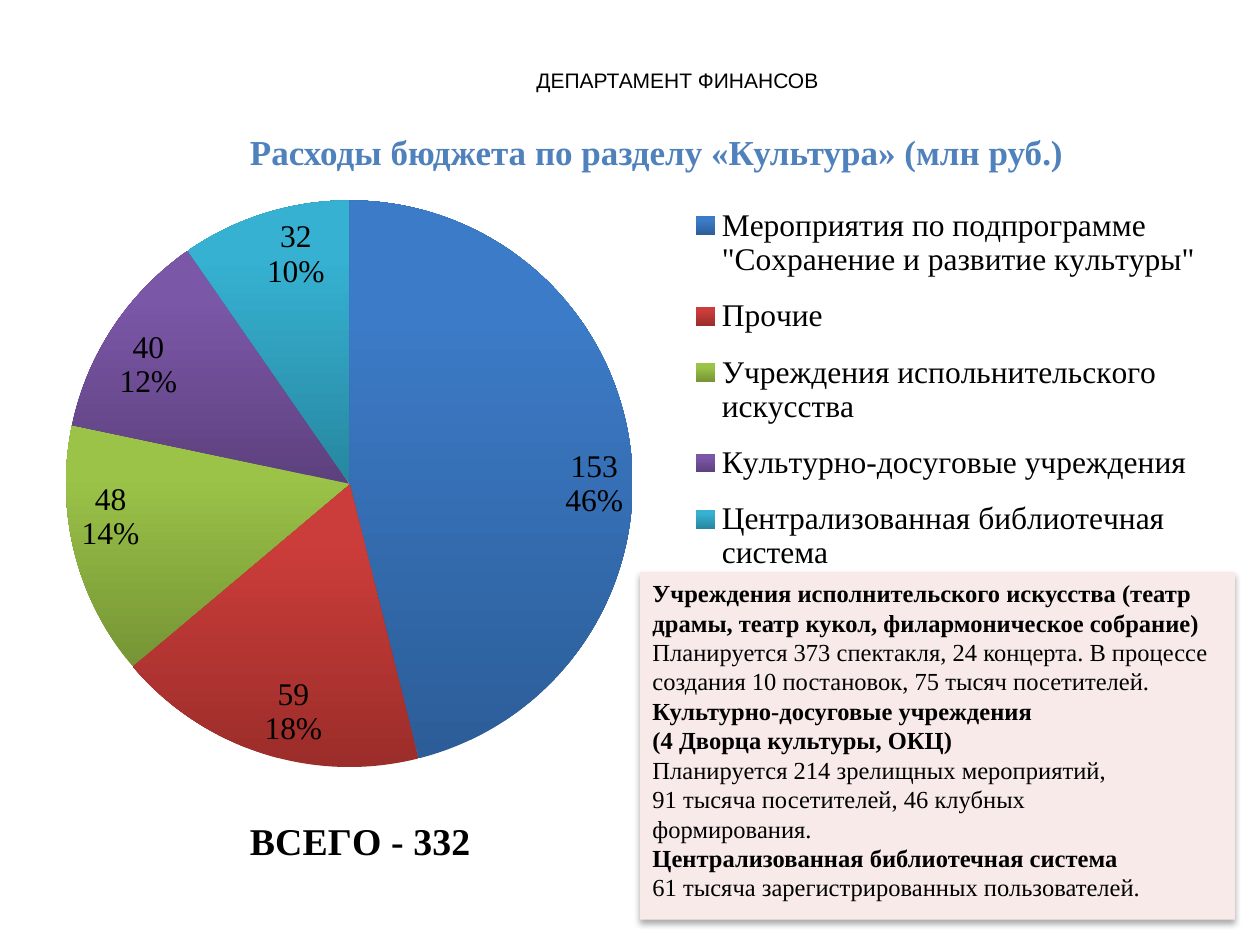
"""Build the slide on culture spending in the city budget."""
from lxml import etree
from pptx import Presentation
from pptx.chart.data import CategoryChartData
from pptx.dml.color import RGBColor
from pptx.enum.chart import XL_CHART_TYPE, XL_LABEL_POSITION as LabelPos, XL_LEGEND_POSITION as LegendPos
from pptx.enum.shapes import MSO_SHAPE
from pptx.enum.text import MSO_ANCHOR, PP_ALIGN
from pptx.oxml import parse_xml
from pptx.oxml.ns import nsdecls, qn
from pptx.util import Inches, Pt

BLACK = RGBColor(0x00, 0x00, 0x00)
HEADING_BLUE = RGBColor(0x4F, 0x81, 0xBD)
NOTE_PINK = RGBColor(0xF7, 0xEA, 0xE9)
SERIF = "Times New Roman"

DEPARTMENT = "ДЕПАРТАМЕНТ ФИНАНСОВ "
HEADING = "Расходы бюджета по разделу «Культура» (млн руб.) "
TOTAL = "ВСЕГО - 332"
SPENDING = [
    ('Мероприятия по подпрограмме "Сохранение и развитие культуры"', 153,
     RGBColor(0x2C, 0x5D, 0x98), RGBColor(0x3C, 0x7B, 0xC7)),
    ("Прочие ", 59, RGBColor(0x9B, 0x2D, 0x2A), RGBColor(0xCB, 0x3D, 0x3A)),
    ("Учреждения испольнительского искусства", 48,
     RGBColor(0x76, 0x95, 0x35), RGBColor(0x9B, 0xC3, 0x48)),
    ("Культурно-досуговые учреждения ", 40,
     RGBColor(0x5D, 0x41, 0x7E), RGBColor(0x7B, 0x57, 0xA8)),
    ("Централизованная библиотечная система", 32,
     RGBColor(0x27, 0x87, 0xA0), RGBColor(0x36, 0xB1, 0xD2)),
]
INSTITUTIONS = [
    (["Учреждения исполнительского искусства (театр",
      "драмы, театр кукол, филармоническое собрание)"],
     ["Планируется 373 спектакля, 24 концерта. В процессе",
      "создания 10 постановок, 75 тысяч посетителей."]),
    (["Культурно-досуговые учреждения", "(4 Дворца культуры, ОКЦ)"],
     ["Планируется 214 зрелищных мероприятий,",
      "91 тысяча посетителей, 46 клубных", "формирования."]),
    (["Централизованная библиотечная система"],
     ["61 тысяча зарегистрированных пользователей."]),
]


def style(font, size, color=BLACK, bold=False, name=SERIF):
    font.name, font.size, font.bold = name, Pt(size), bold
    font.color.rgb = color


def add_line(slide, box, text, *look):
    frame = slide.shapes.add_textbox(*map(Inches, box)).text_frame
    frame.word_wrap = True
    line = frame.paragraphs[0]
    line.alignment = PP_ALIGN.CENTER
    run = line.add_run()
    run.text = text
    style(run.font, *look)


def place(part, previous_tag=None, inner=False, **edges):
    for old in part.findall(qn("c:layout")):
        part.remove(old)
    layout = parse_xml(f'<c:layout {nsdecls("c")}><c:manualLayout/></c:layout>')
    settings = [("layoutTarget", "inner")] if inner else []
    settings += [("xMode", "edge"), ("yMode", "edge"), *edges.items()]
    for tag, value in settings:
        etree.SubElement(layout[0], qn(f"c:{tag}")).set("val", str(value))
    if previous_tag:
        part.find(qn(previous_tag)).addnext(layout)
    else:
        part.insert(0, layout)


def add_spending_chart(slide):
    data = CategoryChartData()
    data.categories = [name for name, *_ in SPENDING]
    data.add_series("Series 1", [amount for _, amount, *_ in SPENDING])
    box = map(Inches, (0.43, 1.31, 9.37, 5.75))
    chart = slide.shapes.add_chart(XL_CHART_TYPE.PIE, *box, data).chart
    style(chart.font, 18)

    chart.has_title = True
    total = chart.chart_title.text_frame.paragraphs[0].add_run()
    total.text = TOTAL
    style(total.font, 21.6, BLACK, True)
    place(chart.chart_title._element, "c:tx", x=0.16, y=0.89)

    chart.has_legend = True
    legend = chart.legend
    legend.position, legend.include_in_layout = LegendPos.RIGHT, False
    style(legend.font, 18)
    place(legend._element, "c:legendPos", x=0.51, y=0.03, w=0.49, h=0.56)

    pie = chart.plots[0]
    pie.vary_by_categories = True
    place(chart._chartSpace.chart.plotArea, inner=True, x=0.01, y=0.04, w=0.48, h=0.8)
    for index, (_, _, dark, light) in enumerate(SPENDING):
        fill = pie.series[0].points[index].format.fill
        fill.gradient()
        fill.gradient_angle = 90
        for stop, color, position in zip(fill.gradient_stops, (dark, light), (0, 0.8)):
            stop.color.rgb, stop.position = color, position

    labels = pie.series[0].data_labels
    style(labels.font, 18)
    labels.position = LabelPos.INSIDE_END
    labels.show_value = labels.show_percentage = True
    labels.show_category_name = labels.show_legend_key = False
    separator = parse_xml(f'<c:separator {nsdecls("c")}>\n</c:separator>')
    labels._element.find(qn("c:showBubbleSize")).addnext(separator)


def add_institutions(slide):
    box = map(Inches, (5.08, 4.54, 4.72, 2.76))
    note = slide.shapes.add_shape(MSO_SHAPE.RECTANGLE, *box)
    note.fill.solid()
    note.fill.fore_color.rgb = NOTE_PINK
    note.line.fill.background()
    note.shadow.inherit = False
    note._element.spPr.find(qn("a:effectLst")).append(parse_xml(
        f'<a:outerShdw {nsdecls("a")} blurRad="{Pt(3.5)}" dist="{Pt(2.2)}" dir="5400000" '
        'rotWithShape="0"><a:srgbClr val="000000"><a:alpha val="32000"/></a:srgbClr></a:outerShdw>'))
    frame = note.text_frame
    frame.word_wrap, frame.vertical_anchor = False, MSO_ANCHOR.TOP
    lines = [(text, bold) for names, plans in INSTITUTIONS
             for group, bold in ((names, True), (plans, False)) for text in group]
    for index, (text, bold) in enumerate(lines):
        line = frame.add_paragraph() if index else frame.paragraphs[0]
        line.alignment = PP_ALIGN.LEFT
        run = line.add_run()
        run.text = text
        style(run.font, 14, BLACK, bold)


def main():
    deck = Presentation()
    deck.slide_width, deck.slide_height = Inches(10), Inches(7.5)
    slide = deck.slides.add_slide(deck.slide_layouts[6])
    add_line(slide, (0.29, 0.99, 9.91, 0.44), HEADING, 20, HEADING_BLUE, True)
    add_spending_chart(slide)
    add_institutions(slide)
    add_line(slide, (0.91, 0.49, 8.98, 0.3), DEPARTMENT, 12, BLACK, False, "Arial")
    deck.save("out.pptx")


if __name__ == "__main__":
    main()
